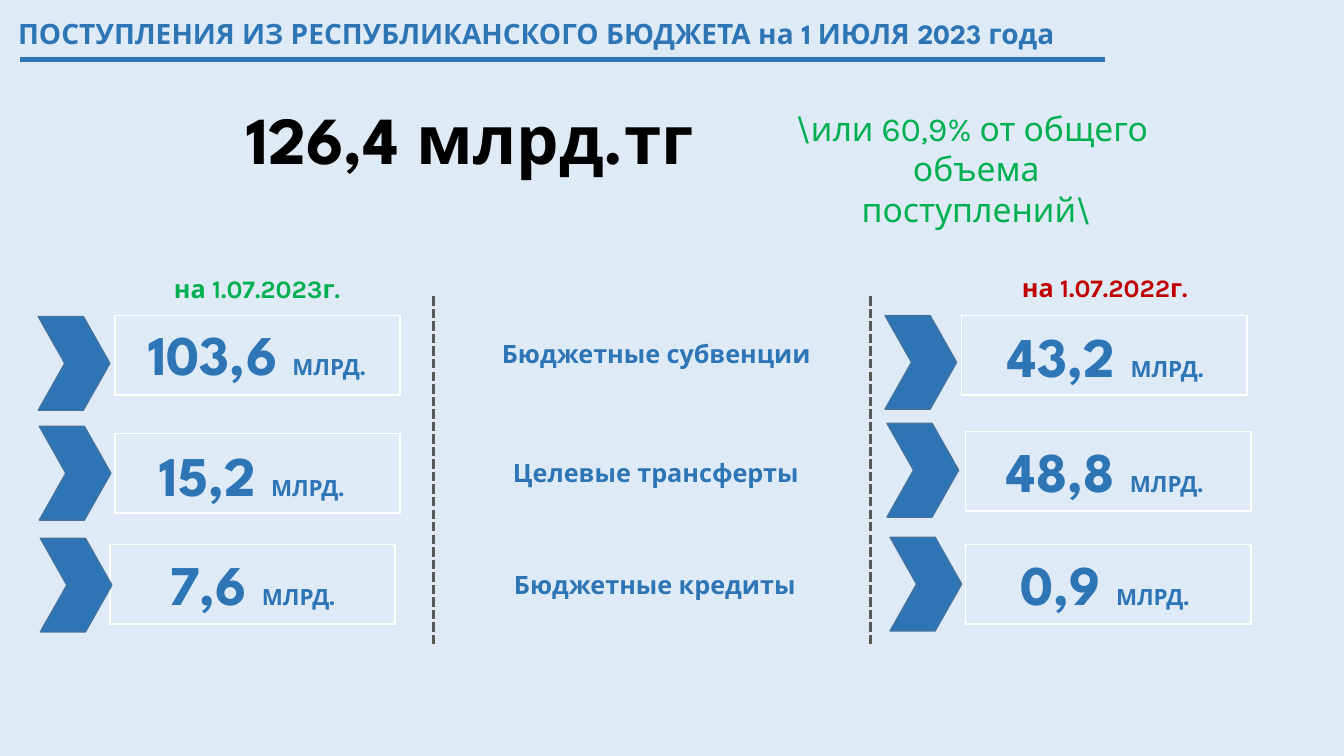
from lxml import etree
from pptx import Presentation
from pptx.dml.color import RGBColor
from pptx.enum.dml import MSO_LINE
from pptx.enum.shapes import MSO_CONNECTOR, MSO_SHAPE
from pptx.enum.text import MSO_ANCHOR, MSO_AUTO_SIZE, PP_ALIGN
from pptx.oxml.ns import qn
from pptx.util import Inches, Pt

LEFT, MID = PP_ALIGN.LEFT, PP_ALIGN.CENTER
CHEVRON, FRAME = MSO_SHAPE.CHEVRON, MSO_SHAPE.ROUNDED_RECTANGLE
STRAIGHT, DOTS = MSO_CONNECTOR.STRAIGHT, MSO_LINE.SQUARE_DOT
TOP, FIXED = MSO_ANCHOR.TOP, MSO_AUTO_SIZE.NONE
HEAD, BODY = "League Spartan", "Karla"
BLUE, EDGE, GREEN, RED = "2E75B6", "43739E", "00B050", "C00000"
WHITE, BLACK, GREY, PALE = "FFFFFF", "000000", "595959", "DEEBF7"


def hue(code):
    return RGBColor.from_string(code)


def write(box, place, lines, face, size, color, bold=True, align=MID):
    """Put lines into a box; place is left, top, width, height in cells."""
    box.left, box.top, box.width, box.height = [int(n * CELL) for n in place]
    frame = box.text_frame
    frame.auto_size, frame.word_wrap = FIXED, True
    frame.vertical_anchor = TOP
    frame.text = "\n".join(lines)
    for para in frame.paragraphs:
        para.alignment = align
        font = para.font
        font.name, font.size, font.bold = face, Pt(size), bold
        font.color.rgb = hue(color)
    return frame.paragraphs[0]


# Slide on a grid of tenth-inch cells
CELL = Inches(0.1)
deck = Presentation()
deck.slide_width, deck.slide_height = int(133.33 * CELL), 75 * CELL
slide = deck.slides.add_slide(deck.slide_layouts[5])
slide.background.fill.solid()
slide.background.fill.fore_color.rgb = hue(PALE)
shapes = slide.shapes

# Title
write(shapes.title, (0.8, 1.1, 130.8, 4.4),
      ["ПОСТУПЛЕНИЯ ИЗ РЕСПУБЛИКАНСКОГО БЮДЖЕТА на 1 ИЮЛЯ 2023 года"],
      HEAD, 20, BLUE, align=LEFT)

# Title rule and the two dotted dividers
for x1, y1, x2, y2, color, width, dash in [
        (2, 5.9, 109.6, 5.9, BLUE, 3, None),
        (43, 29.4, 43, 64, GREY, 2.25, DOTS),
        (86.4, 29.4, 86.4, 64, GREY, 2.25, DOTS)]:
    rule = shapes.add_connector(
        STRAIGHT, *[int(n * CELL) for n in (x1, y1, x2, y2)])
    rule.line.color.rgb = hue(color)
    rule.line.width = Pt(width)
    rule.line.dash_style = dash
    etree.SubElement(rule._element.spPr, qn("a:effectLst"))

# Total, its share, dates and row names
for place, lines, face, size, color, bold, align in [
        ((3.5, 9.2, 86.2, 9.1), ["126,4 млрд.тг"],
         HEAD, 48, BLACK, True, MID),
        ((78, 10.2, 37.7, 9.1),
         ["\\или 60,9% от общего ", "объема поступлений\\"],
         BODY, 24, GREEN, False, MID),
        ((12.1, 26.6, 26.8, 4), ["на 1.07.2023г."],
         BODY, 18, GREEN, True, MID),
        ((96.2, 26.5, 26.8, 4), ["на 1.07.2022г."],
         BODY, 18, RED, True, MID),
        ((48.8, 33.1, 34.1, 4), ["Бюджетные субвенции"],
         BODY, 18, BLUE, True, LEFT),
        ((49.9, 44.9, 31.5, 4), ["Целевые трансферты"],
         BODY, 18, BLUE, True, LEFT),
        ((50, 56, 30.2, 4), ["Бюджетные кредиты"],
         BODY, 18, BLUE, True, LEFT)]:
    box = shapes.add_textbox(0, 0, 0, 0)
    write(box, place, lines, face, size, color, bold, align)

# Amounts: number, then left and top of chevron, frame and text
for number, arrow, edge, spot in [
        ("103,6 ", (3.8, 31.4), (11.4, 31.3), (13, 31.2)),
        ("15,2 ", (3.9, 42.3), (11.4, 43), (12.5, 43.2)),
        ("7,6 ", (4, 53.4), (10.9, 54), (12.5, 54)),
        ("43,2 ", (87.8, 31.3), (95.4, 31.3), (97.2, 31.4)),
        ("48,8 ", (88, 42), (95.8, 42.8), (97.1, 42.8)),
        ("0,9 ", (88.3, 53.3), (95.8, 54), (97.1, 54))]:
    for kind, place, bend, color in [
            (FRAME, (*edge, 28.3, 7.9), 0, WHITE),
            (CHEVRON, (*arrow, 7.1, 9.3), 0.37, EDGE)]:
        part = shapes.add_shape(kind, *[int(n * CELL) for n in place])
        part.adjustments[0] = bend
        part.shadow.inherit = False
        part.line.color.rgb = hue(color)
        part.line.width = Pt(1)
        if kind == CHEVRON:
            part.fill.solid()
            part.fill.fore_color.rgb = hue(BLUE)
        else:
            part.fill.background()
    box = shapes.add_textbox(0, 0, 0, 0)
    para = write(box, (*spot, 25, 7.7), [number], HEAD, 40, BLUE)
    for word, face, size in [("МЛРД", HEAD, 16), (".", BODY, 18)]:
        run = para.add_run()
        run.text = word
        run.font.name, run.font.size = face, Pt(size)

deck.save("out.pptx")
